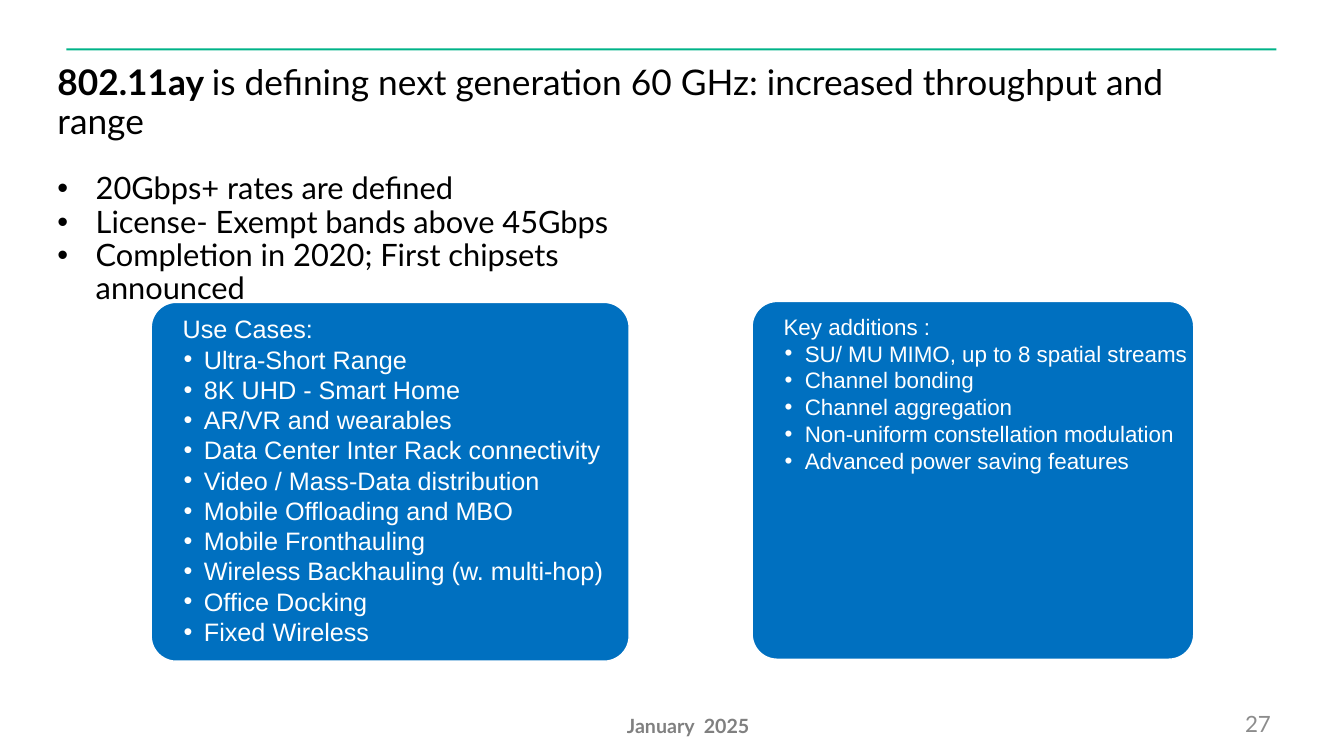
from lxml.etree import SubElement
from pptx import Presentation
from pptx.dml.color import RGBColor
from pptx.enum.shapes import MSO_SHAPE as Shape
from pptx.enum.text import MSO_ANCHOR as Anchor, PP_ALIGN as Align
from pptx.oxml.ns import qn
from pptx.util import Inches, Pt

BLACK = RGBColor(0x00, 0x00, 0x00)
WHITE = RGBColor(0xFF, 0xFF, 0xFF)
GREEN = RGBColor(0x00, 0xB3, 0x88)
BLUE = RGBColor(0x00, 0x70, 0xC0)
DATE_GRAY = RGBColor(0x80, 0x80, 0x80)
NUMBER_GRAY = RGBColor(0x8C, 0x8C, 0x8C)

HIGHLIGHTS = [
    "20Gbps+ rates are defined",
    "License- Exempt bands above 45Gbps",
    "Completion in 2020; First chipsets announced",
]
USE_CASES = [
    "Ultra-Short Range",
    "8K UHD - Smart Home",
    "AR/VR and wearables",
    "Data Center Inter Rack connectivity",
    "Video / Mass-Data distribution",
    "Mobile Offloading and MBO",
    "Mobile Fronthauling",
    "Wireless Backhauling (w. multi-hop)",
    "Office Docking",
    "Fixed Wireless",
]
KEY_ADDITIONS = [
    "SU/ MU MIMO, up to 8 spatial streams",
    "Channel bonding",
    "Channel aggregation",
    "Non-uniform constellation modulation",
    "Advanced power saving features",
]


def inches(box):
    """Convert a box in inches to slide lengths."""
    return [Inches(length) for length in box]


def set_frame(frame, margins, wrap):
    """Set the margins, wrapping and top anchor of a text frame."""
    left, top = inches(margins)
    values = {"margin_left": left, "margin_right": left, "margin_top": top,
              "margin_bottom": top, "word_wrap": wrap,
              "vertical_anchor": Anchor.TOP}
    for key, value in values.items():
        setattr(frame, key, value)


def add_words(paragraph, words, size, color, face="Lato", bold=False):
    """Add a formatted run to a paragraph."""
    run = paragraph.add_run()
    run.text = words
    values = {"name": face, "size": Pt(size), "bold": bold}
    for key, value in values.items():
        setattr(run.font, key, value)
    run.font.color.rgb = color


def set_indent(paragraph, left, hanging, bullet=True):
    """Give a paragraph a hanging indent and, if asked, a bullet."""
    properties = paragraph._p.get_or_add_pPr()
    properties.set("marL", str(Inches(left)))
    properties.set("indent", str(-Inches(hanging)))
    if bullet:
        SubElement(properties, qn("a:buFont")).set("typeface", "Arial")
        SubElement(properties, qn("a:buChar")).set("char", "•")


def add_rule(slide, box):
    """Draw the thin green rule above the title."""
    rule = slide.shapes.add_shape(Shape.RECTANGLE, *inches(box))
    rule.shadow.inherit = False
    rule.fill.solid()
    rule.fill.fore_color.rgb = GREEN
    rule.line.fill.background()


def add_title(slide, box):
    """Place the title with its leading standard name in bold."""
    title = slide.shapes.title
    for side, length in zip(("left", "top", "width", "height"), inches(box)):
        setattr(title, side, length)
    set_frame(title.text_frame, (0, 0), True)
    headline = title.text_frame.paragraphs[0]
    headline.alignment = Align.LEFT
    headline.line_spacing = 0.9
    add_words(headline, "802.11ay ", 25.2, BLACK, bold=True)
    add_words(headline, "is defining next generation 60 GHz: "
              "increased throughput and range", 25.2, BLACK)


def add_highlights(slide, box):
    """Place the bulleted highlights under the title."""
    frame = slide.shapes.add_textbox(*inches(box)).text_frame
    set_frame(frame, (0, 0), False)
    for index, highlight in enumerate(HIGHLIGHTS):
        item = frame.add_paragraph() if index else frame.paragraphs[0]
        item.line_spacing = 0.9
        set_indent(item, 0.38, 0.38)
        add_words(item, highlight, 22, BLACK)


def add_card(slide, box, heading, entries, size):
    """Draw a rounded blue card with a heading and bulleted entries."""
    card = slide.shapes.add_shape(Shape.ROUNDED_RECTANGLE, *inches(box))
    card.adjustments[0] = 0.07
    card.shadow.inherit = False
    card.fill.solid()
    card.fill.fore_color.rgb = BLUE
    card.line.color.rgb = WHITE
    card.line.width = Pt(1)
    frame = card.text_frame
    set_frame(frame, (0.06, 0.04), False)
    top = frame.paragraphs[0]
    top.alignment = Align.LEFT
    set_indent(top, 0.45, 0.27, bullet=False)
    add_words(top, heading, size, WHITE, "Arial")
    for entry in entries:
        item = frame.add_paragraph()
        item.level = 1
        item.alignment = Align.LEFT
        set_indent(item, 0.39, 0.2)
        add_words(item, entry, size, WHITE, "Arial")


def add_footer(slide, box, words, size, color, bold=False):
    """Place one footer text."""
    frame = slide.shapes.add_textbox(*inches(box)).text_frame
    set_frame(frame, (0.1, 0.05), True)
    add_words(frame.paragraphs[0], words, size, color, bold=bold)


def main():
    """Build the slide and save it."""
    deck = Presentation()
    deck.slide_width, deck.slide_height = inches((13.33, 7.5))
    slide = deck.slides.add_slide(deck.slide_layouts[5])
    add_rule(slide, (0.66, 0.48, 12, 0.02))
    add_card(slide, (1.5, 3, 4.74, 3.56), "Use Cases:", USE_CASES, 18)
    add_card(slide, (7.46, 2.99, 4.38, 3.55), "Key additions :",
             KEY_ADDITIONS, 16)
    add_title(slide, (0.57, 0.65, 11.84, 0.6))
    add_highlights(slide, (0.57, 1.72, 6.26, 1))
    add_footer(slide, (12.25, 7, 0.58, 0.25), "27", 16, NUMBER_GRAY)
    add_footer(slide, (6.12, 7.03, 1.63, 0.23), "January  2025", 14,
               DATE_GRAY, bold=True)
    deck.save("out.pptx")


if __name__ == "__main__":
    main()
